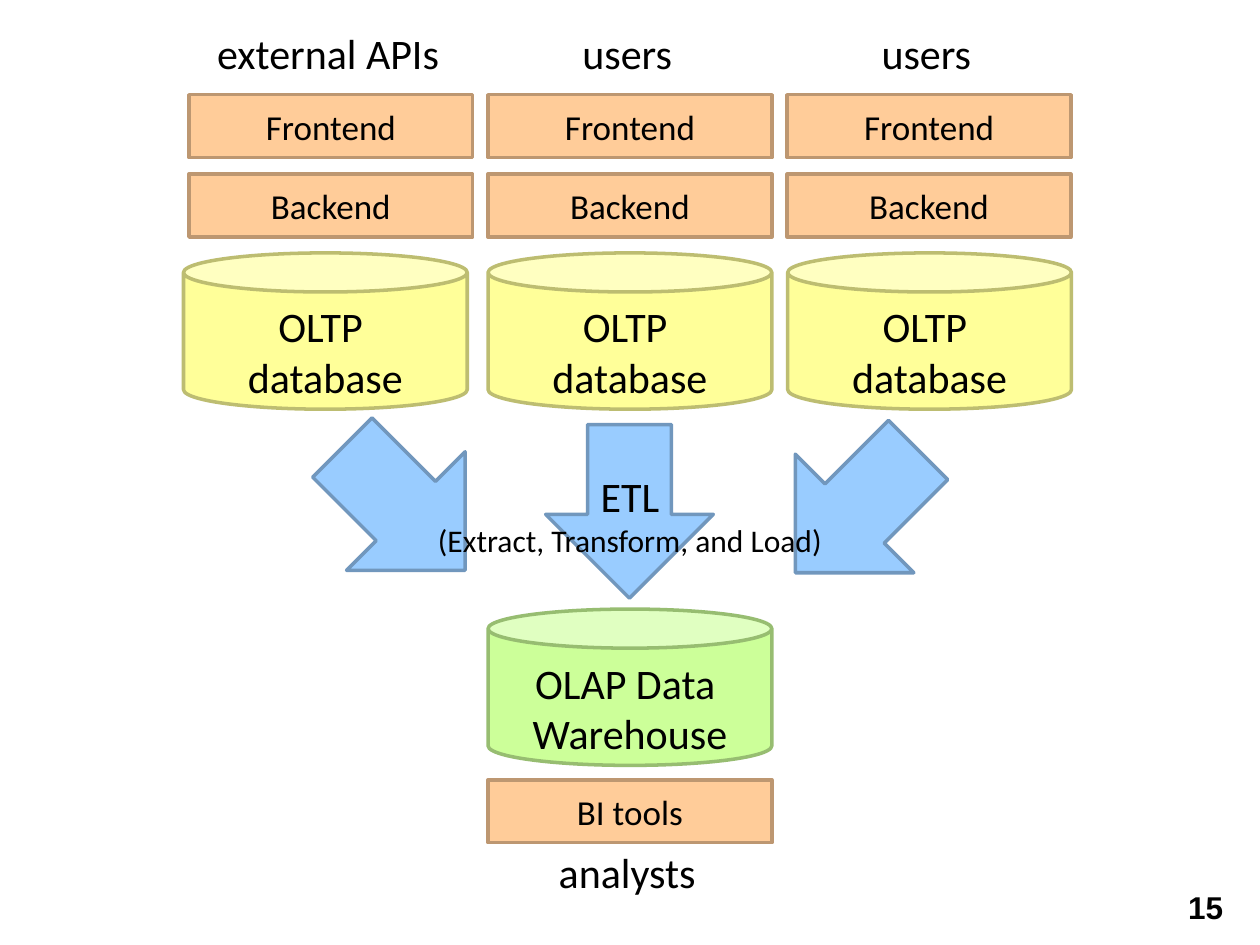
from lxml.etree import SubElement
from pptx import Presentation
from pptx.dml.color import RGBColor
from pptx.enum.shapes import MSO_SHAPE as Preset
from pptx.enum.text import MSO_ANCHOR as Anchor, MSO_AUTO_SIZE as AutoSize, PP_ALIGN as Align
from pptx.oxml.ns import qn
from pptx.util import Cm, Pt

# Content: (audience, left edge of the database) per column
COLUMNS = [("external APIs", 3.7), ("users", 9.84), ("users", 15.88)]
TIERS = [("Frontend", 1.91), ("Backend", 3.51)]
DATABASE = ["OLTP ", "database"]
WAREHOUSE = ["OLAP Data ", "Warehouse"]
ETL = [("ETL", 24), ("(Extract, Transform, and Load)", 18)]
ARROWS = [(15.58, 8.56, 45), (6.45, 8.51, 315), (11, 8.56, 0)]  # left, top, rotation

# (fill, line)
ORANGE = ("FFCC99", "BD9771")
YELLOW = ("FFFF99", "BDBD71")
GREEN = ("CCFF99", "97BD71")
BLUE = ("99CCFF", "7197BD")

# Layout in centimetres
FIRST_LEFT, PITCH, MIDDLE = 3.81, 6.03, 9.84
WIDTH, LABEL_WIDTH = 5.72, 5.61
BAR_HEIGHT, CAN_HEIGHT, LABEL_HEIGHT = 1.27, 3.15, 1.27
ARROW_WIDTH, ARROW_HEIGHT = 3.38, 3.5


def color(value):
    return RGBColor.from_string(value)


def write(box, lines, font="Calibri", align=Align.CENTER, bold=None):
    """Fill a box with one paragraph of (text, size) lines."""
    para = box.text_frame.paragraphs[0]
    para.alignment = align
    for index, (text, size) in enumerate(lines):
        if index:
            para.add_line_break()
        span = para.add_run()
        span.text = text
        span.font.size = Pt(size)
        span.font.name = font
        span.font.bold = bold
        span.font.color.rgb = color("000000")
    if len(lines) > 1:
        # Line breaks take the size of the first line
        for line_break in para._p.findall(qn("a:br")):
            SubElement(line_break, qn("a:rPr"), sz=str(lines[0][1] * 100))


def add_preset(shapes, preset, left, top, width, height, colors):
    shape = shapes.add_shape(preset, Cm(left), Cm(top), Cm(width), Cm(height))
    shape.shadow.inherit = False
    shape.fill.solid()
    shape.fill.fore_color.rgb = color(colors[0])
    shape.line.color.rgb = color(colors[1])
    shape.line.width = Pt(2)
    return shape


def add_text(shapes, left, top, width, height, lines, **style):
    box = shapes.add_textbox(Cm(left), Cm(top), Cm(width), Cm(height))
    box.text_frame.word_wrap = True
    box.text_frame.auto_size = AutoSize.SHAPE_TO_FIT_TEXT
    write(box, lines, **style)


def add_bar(shapes, left, top, text):
    bar = add_preset(shapes, Preset.RECTANGLE, left, top, WIDTH, BAR_HEIGHT, ORANGE)
    bar.text_frame.vertical_anchor = Anchor.MIDDLE
    write(bar, [(text, 20)])


def add_store(shapes, left, top, lines, colors):
    """A cylinder with its caption, grouped."""
    group = shapes.add_group_shape().shapes
    add_preset(group, Preset.CAN, left, top, WIDTH, CAN_HEIGHT, colors)
    add_text(group, left, top + 0.84, WIDTH, 2.31, [(line, 24) for line in lines])


deck = Presentation()
deck.slide_width, deck.slide_height = Cm(25.4), Cm(19.05)
page = deck.slides.add_slide(deck.slide_layouts[6])
shapes = page.shapes

# Arrows into the warehouse
for left, top, rotation in ARROWS:
    arrow = add_preset(shapes, Preset.DOWN_ARROW, left, top, ARROW_WIDTH, ARROW_HEIGHT, BLUE)
    arrow.rotation = rotation

# Source systems
for index, (audience, store_left) in enumerate(COLUMNS):
    left = FIRST_LEFT + index * PITCH
    add_text(shapes, left, 0.43, LABEL_WIDTH, LABEL_HEIGHT, [(audience, 24)])
    for name, top in TIERS:
        add_bar(shapes, left, top, name)
    add_store(shapes, store_left, 5.1, DATABASE, YELLOW)

# Warehouse and its users
add_store(shapes, MIDDLE, 12.28, WAREHOUSE, GREEN)
add_bar(shapes, MIDDLE, 15.72, "BI tools")
add_text(shapes, MIDDLE, 16.95, LABEL_WIDTH, LABEL_HEIGHT, [("analysts", 24)])
add_text(shapes, 7.62, 9.37, 10.16, 2.06, ETL)

# Page number
add_text(shapes, 23.7, 17.78, 1.47, 1.02, [("15", 18)], font="Arial", align=Align.LEFT, bold=True)

deck.save("out.pptx")
